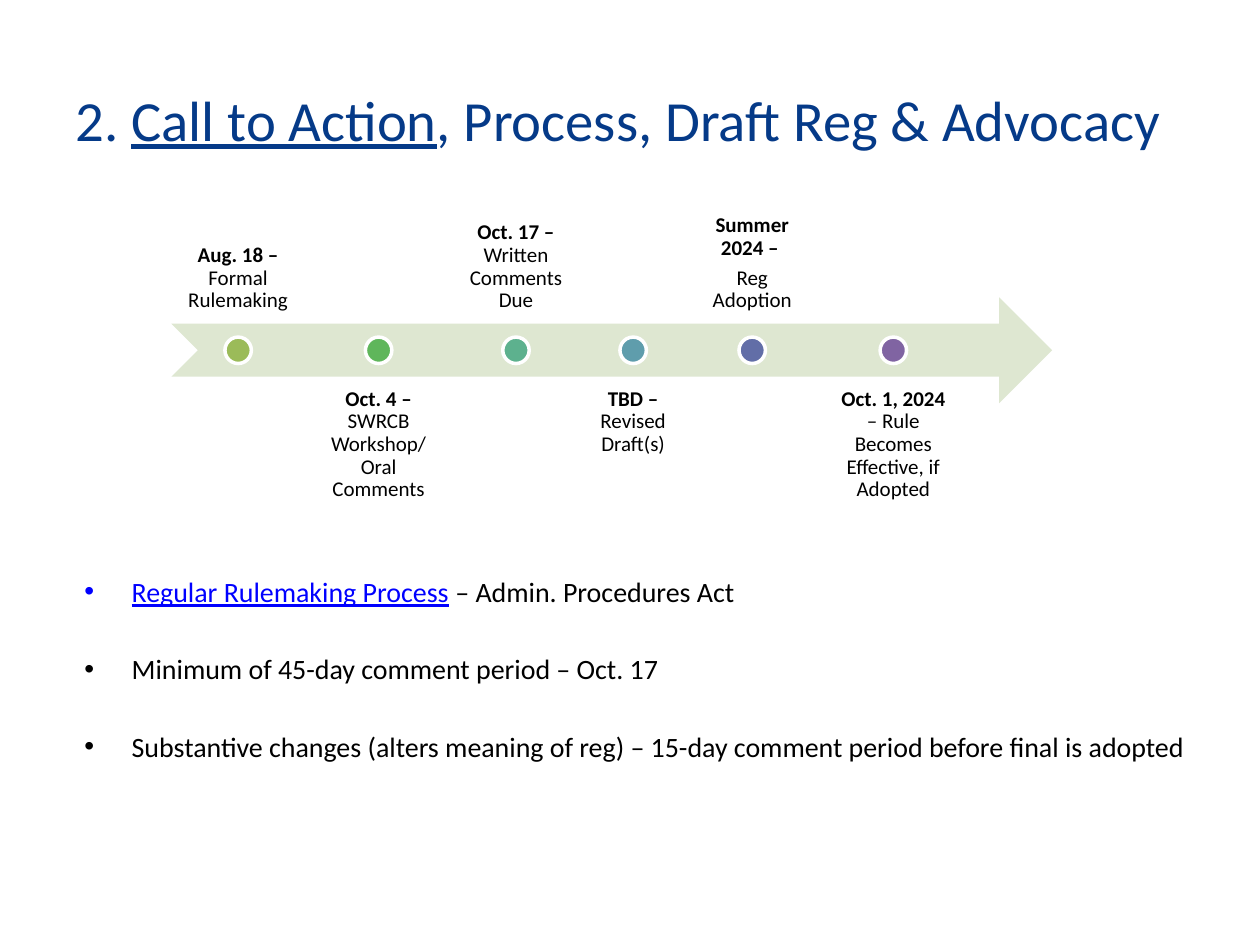
"""Build the call-to-action slide with its rulemaking timeline."""
from pptx import Presentation
from pptx.dml.color import RGBColor
from pptx.enum.shapes import MSO_SHAPE
from pptx.enum.text import MSO_ANCHOR, MSO_AUTO_SIZE, PP_ALIGN
from pptx.util import Inches, Pt

BLACK = RGBColor(0x00, 0x00, 0x00)
WHITE = RGBColor(0xFF, 0xFF, 0xFF)
NAVY = RGBColor(0x05, 0x3A, 0x88)
LINK_BLUE = RGBColor(0x00, 0x00, 0xFF)
PALE_GREEN = RGBColor(0xDE, 0xE7, 0xD1)
OLIVE = RGBColor(0x9B, 0xBB, 0x59)
GREEN = RGBColor(0x5F, 0xB6, 0x5B)
SEA_GREEN = RGBColor(0x5D, 0xB1, 0x8E)
TEAL = RGBColor(0x5F, 0x9D, 0xAC)
INDIGO = RGBColor(0x62, 0x6E, 0xA7)
PURPLE = RGBColor(0x80, 0x64, 0xA2)

PLAIN, BOLD, UNDERLINE = {}, {"bold": True}, {"underline": True}
LINK = {"underline": True, "color": LINK_BLUE}

TITLE = [[("2. ", PLAIN), ("Call to Action", UNDERLINE),
          (", Process, Draft Reg & Advocacy", PLAIN)]]
BULLETS = [
    [("Regular Rulemaking Process", LINK), (" – Admin. Procedures Act", PLAIN)],
    [("Minimum of 45-day comment period – Oct. 17", PLAIN)],
    [("Substantive changes (alters meaning of reg) – 15-day comment period "
      "before final is adopted", PLAIN)],
]
MILESTONES = [
    (1.06, OLIVE, [[("Aug. 18 – ", BOLD), ("Formal Rulemaking", PLAIN)]]),
    (1.09, GREEN, [[("Oct. 4 – ", BOLD), ("SWRCB Workshop/ Oral Comments", PLAIN)]]),
    (1.01, SEA_GREEN, [[("Oct. 17 – ", BOLD), ("Written Comments Due", PLAIN)]]),
    (0.77, TEAL, [[("TBD – ", BOLD), ("Revised Draft(s)", PLAIN)]]),
    (1.04, INDIGO, [[("Summer 2024 – ", BOLD)], [("Reg Adoption", PLAIN)]]),
    (1.12, PURPLE, [[("Oct. 1, 2024 ", BOLD),
                     ("– Rule Becomes Effective, if Adopted", PLAIN)]]),
]
ARROW_LEFT, ARROW_TOP, ARROW_WIDTH, ARROW_HEIGHT = 1.36, 2.36, 6.99, 0.84
LABEL_TOPS = (1.73, 2.99)
LABEL_ANCHORS = (MSO_ANCHOR.BOTTOM, MSO_ANCHOR.TOP)
LABEL_GAP, LABEL_INSET, DOT_SIZE = 0.04, 0.09, 0.21


def set_values(target, values):
    for name, value in values.items():
        setattr(target, name, value)


def place(shape, left, top, width, height):
    set_values(shape, {"left": Inches(left), "top": Inches(top),
                       "width": Inches(width), "height": Inches(height)})


def write(shape, paragraphs, size, color, paragraph_format, frame_format):
    frame = shape.text_frame
    set_values(frame, {"word_wrap": True, "auto_size": MSO_AUTO_SIZE.NONE, **frame_format})
    for index, runs in enumerate(paragraphs):
        paragraph = frame.add_paragraph() if index else frame.paragraphs[0]
        set_values(paragraph, paragraph_format)
        if index == 0:
            paragraph.space_before = Pt(0)
        for text, run_format in runs:
            run = paragraph.add_run()
            run.text = text
            font_format = {"name": "Calibri", "size": Pt(size), **run_format}
            run.font.color.rgb = font_format.pop("color", color)
            set_values(run.font, font_format)


def add_filled_shape(slide, kind, bounds, fill):
    shape = slide.shapes.add_shape(kind, *map(Inches, bounds))
    shape.shadow.inherit = False
    shape.fill.solid()
    shape.fill.fore_color.rgb = fill
    shape.line.fill.background()
    return shape


def add_timeline(slide):
    add_filled_shape(slide, MSO_SHAPE.NOTCHED_RIGHT_ARROW,
                     (ARROW_LEFT, ARROW_TOP, ARROW_WIDTH, ARROW_HEIGHT), PALE_GREEN)
    insets = {f"margin_{side}": Inches(LABEL_INSET)
              for side in ("left", "top", "right", "bottom")}
    label_format = {"alignment": PP_ALIGN.CENTER, "line_spacing": 0.9,
                    "space_after": Pt(4.2)}
    dot_top = ARROW_TOP + (ARROW_HEIGHT - DOT_SIZE) / 2
    left = ARROW_LEFT
    for index, (width, color, paragraphs) in enumerate(MILESTONES):
        row = index % 2
        bounds = (left, LABEL_TOPS[row], width, ARROW_HEIGHT)
        label = slide.shapes.add_textbox(*map(Inches, bounds))
        write(label, paragraphs, 12, BLACK, label_format,
              {"vertical_anchor": LABEL_ANCHORS[row], **insets})
        dot_left = left + (width - DOT_SIZE) / 2
        dot = add_filled_shape(slide, MSO_SHAPE.OVAL,
                               (dot_left, dot_top, DOT_SIZE, DOT_SIZE), color)
        dot.line.color.rgb = WHITE
        dot.line.width = Pt(2)
        left += width + LABEL_GAP


def main():
    presentation = Presentation()
    presentation.slide_width, presentation.slide_height = Inches(10), Inches(7.5)
    slide = presentation.slides.add_slide(presentation.slide_layouts[1])
    title, body = slide.shapes.title, slide.placeholders[1]
    place(title, 0.5, 0.29, 9, 0.97)
    write(title, TITLE, 32.4, NAVY,
          {"alignment": PP_ALIGN.LEFT, "line_spacing": Pt(36)},
          {"vertical_anchor": MSO_ANCHOR.BOTTOM})
    place(body, 0.57, 4.51, 9, 4.04)
    write(body, BULLETS, 16, BLACK, {"space_before": Pt(25)},
          {"vertical_anchor": MSO_ANCHOR.TOP})
    add_timeline(slide)
    presentation.save("out.pptx")


if __name__ == "__main__":
    main()
